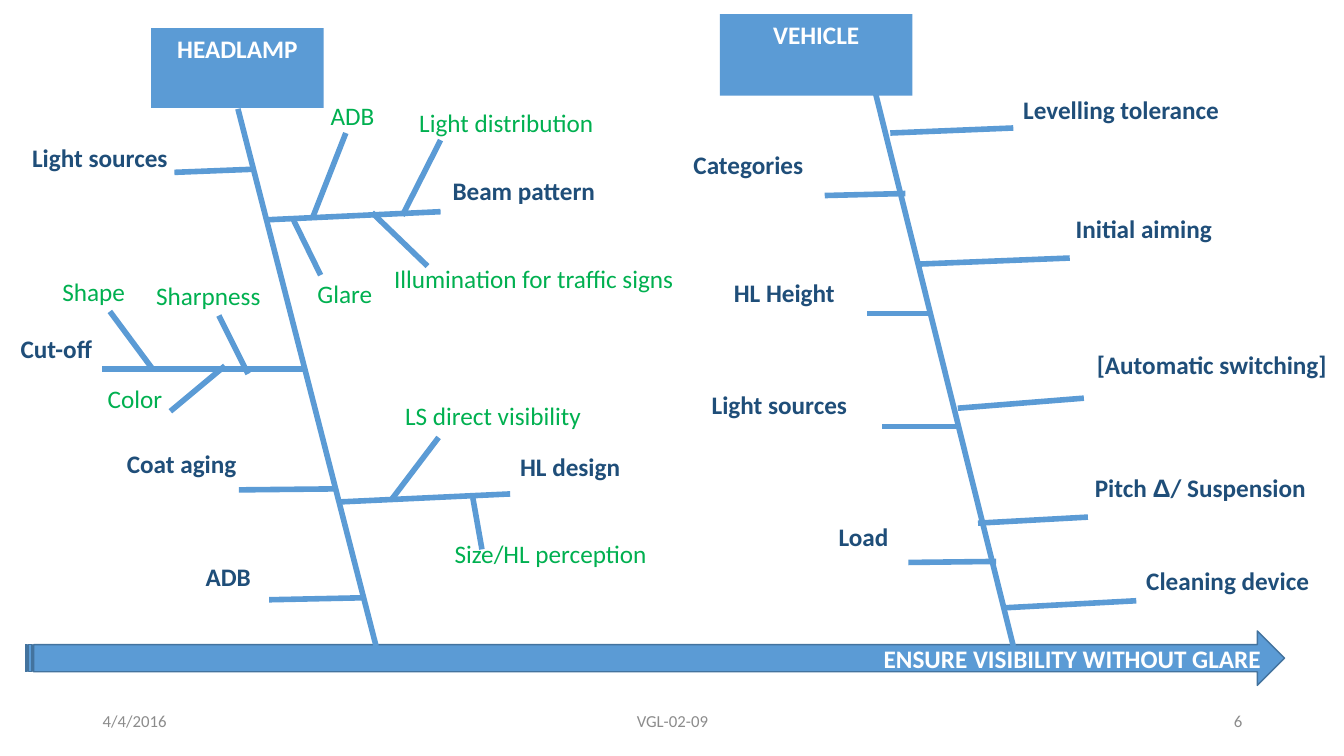
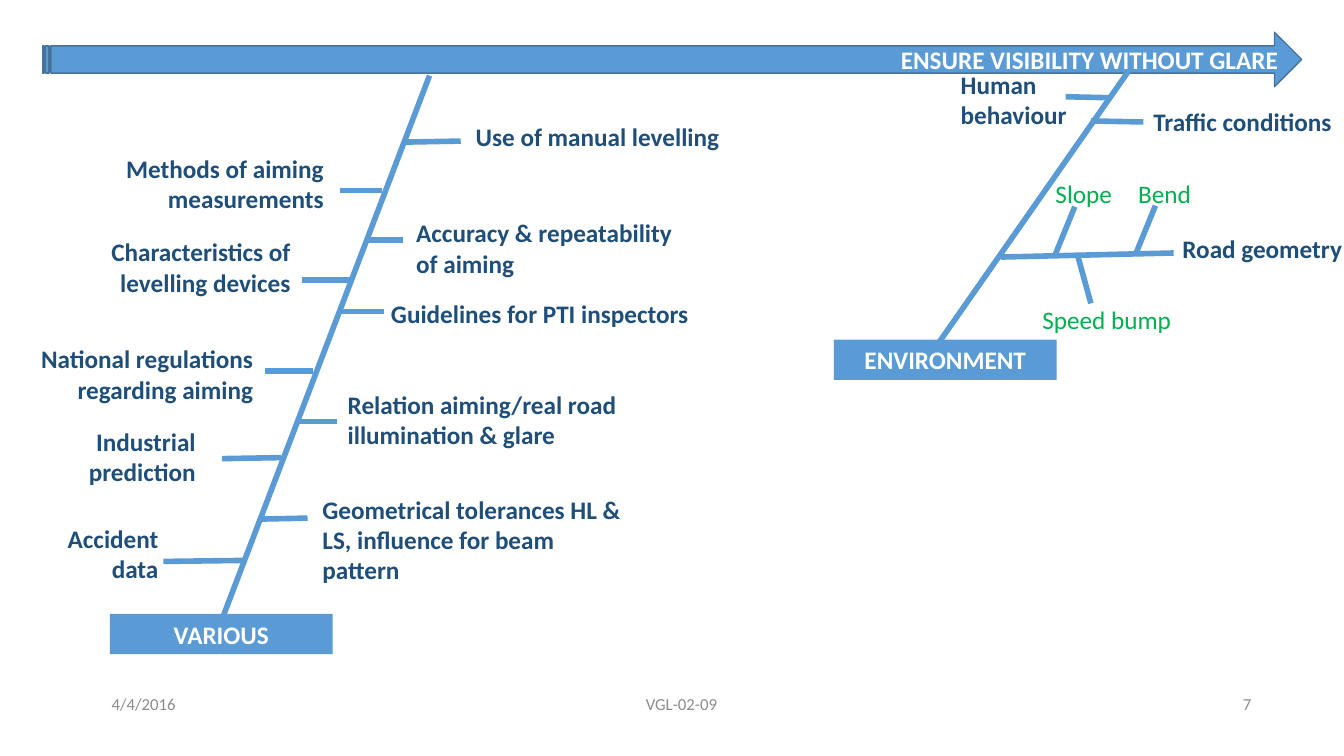
from itertools import groupby

from lxml import etree
from pptx import Presentation
from pptx import util as u
from pptx.dml import color
from pptx.enum import shapes, text
from pptx.oxml import ns

COLORS = {
    "bone": "5B9BD5",
    "edge": "43739E",
    "cause": "1F4E79",
    "detail": "00B050",
    "footer": "8C8C8C",
    "white": "FFFFFF",
}
ALIGN = text.PP_ALIGN
ANCHOR = text.MSO_ANCHOR


def inches(value):
    return u.Cm(value * 2.54)


def rgb(name):
    return color.RGBColor.from_string(COLORS[name])


class Fishbone:
    font = "Calibri"
    symbol_font = "Arial"
    size = 18
    bone_width = 4
    inset = 0.1

    def __init__(self):
        self.deck = Presentation()
        self.deck.slide_width = inches(13.33)
        self.deck.slide_height = inches(7.5)
        self.page = None

    def new_page(self):
        self.page = self.deck.slides.add_slide(self.deck.slide_layouts[6])

    def add_words(self, box, words, ink, align, bold=True, size=None, anchor=ANCHOR.TOP):
        frame = box.text_frame
        frame.word_wrap = True
        frame.vertical_anchor = anchor
        for index, line in enumerate(words.split("\n")):
            para = frame.add_paragraph() if index else frame.paragraphs[0]
            para.alignment = align
            for is_symbol, letters in groupby(line, key=lambda letter: letter == "Δ"):
                span = para.add_run()
                span.text = "".join(letters)
                span.font.name = self.symbol_font if is_symbol else self.font
                span.font.size = u.Pt(size or self.size)
                span.font.bold = bold
                span.font.color.rgb = rgb(ink)
        return frame

    def text_box(self, left, top, width, height):
        return self.page.shapes.add_textbox(*map(inches, (left, top, width, height)))

    def filled(self, kind, left, top, width, height):
        box = self.page.shapes.add_shape(kind, *map(inches, (left, top, width, height)))
        box.shadow.inherit = False
        box.fill.solid()
        box.fill.fore_color.rgb = rgb("bone")
        box.line.fill.background()
        return box

    def arrow(self, left, top):
        box = self.filled(shapes.MSO_SHAPE.STRIPED_RIGHT_ARROW, left, top, 12.49, 0.54)
        box.line.color.rgb = rgb("edge")
        box.line.width = u.Pt(1)
        self.add_words(box, "ENSURE VISIBILITY WITHOUT GLARE", "white", ALIGN.RIGHT,
                       anchor=ANCHOR.MIDDLE)

    def head(self, words, left, top, width, height):
        box = self.filled(shapes.MSO_SHAPE.RECTANGLE, left, top, width, height)
        self.add_words(box, words, "white", ALIGN.CENTER)

    def bone(self, x1, y1, x2, y2):
        line = self.page.shapes.add_connector(
            shapes.MSO_CONNECTOR.STRAIGHT, *map(inches, (x1, y1, x2, y2)))
        line.line.color.rgb = rgb("bone")
        line.line.width = u.Pt(self.bone_width)
        etree.SubElement(line._element.spPr, ns.qn("a:effectLst"))

    def label(self, words, left, top, width, ink, align):
        box = self.text_box(left, top, width, 0.4)
        frame = self.add_words(box, words, ink, align, bold=ink == "cause")
        on_right = align == ALIGN.RIGHT
        frame.margin_left = inches(0 if on_right else self.inset)
        frame.margin_right = inches(self.inset if on_right else 0)

    def branches(self, ink, rows, align=ALIGN.LEFT):
        for words, place, ends in rows:
            self.bone(*ends)
            self.label(words, *place, ink, align)

    def footer(self, left, top, number):
        cells = (
            ("4/4/2016", 0, 3, ALIGN.LEFT),
            ("VGL-02-09", 3.5, 4.5, ALIGN.CENTER),
            (number, 8.5, 3, ALIGN.RIGHT),
        )
        for words, offset, width, align in cells:
            box = self.text_box(left + offset, top, width, 0.4)
            self.add_words(box, words, "footer", align, bold=False, size=12,
                           anchor=ANCHOR.MIDDLE)


HEADLAMP_CAUSES = (
    ("Light sources", (0.22, 1.36, 1.67), (2.49, 1.68, 1.73, 1.71)),
    ("Beam pattern", (4.39, 1.69, 2), (4.37, 2.1, 2.66, 2.18)),
    ("Coat aging", (1.16, 4.4, 1.68), (3.32, 4.85, 2.37, 4.86)),
    ("HL design", (5.06, 4.43, 2.16), (5.06, 4.9, 3.36, 4.98)),
    ("ADB", (1.94, 5.52, 1.07), (3.62, 5.93, 2.67, 5.95)),
)
CUT_OFF = (("Cut-off", (0, 3.26, 1.01), (3.02, 3.66, 1.01, 3.66)),)
HEADLAMP_DETAILS = (
    ("ADB", (3.18, 0.95, 0.8), (3.43, 1.32, 3.1, 2.16)),
    ("Light distribution", (4.06, 1.02, 2.83), (4.37, 1.39, 3.99, 2.14)),
    ("Glare", (3.05, 2.71, 1.65), (2.91, 2.18, 3.18, 2.73)),
    ("Illumination for traffic signs", (3.81, 2.56, 3), (3.69, 2.11, 4.24, 2.64)),
    ("Shape", (0.52, 2.69, 1.16), (1.09, 3.09, 1.52, 3.67)),
    ("Sharpness", (1.45, 2.73, 1.44), (2.17, 3.13, 2.46, 3.71)),
    ("Color", (0.97, 3.75, 1.13), (2.23, 3.63, 1.69, 4.08)),
    ("LS direct visibility", (3.92, 3.92, 2.01), (4.35, 4.34, 3.88, 4.96)),
    ("Size/HL perception", (4.41, 5.29, 2.47), (4.78, 5.45, 4.69, 4.94)),
)
VEHICLE_CAUSES = (
    ("Levelling tolerance", (10.05, 0.89, 2.53), (10.05, 1.27, 8.83, 1.32)),
    ("Categories", (6.78, 1.43, 1.44), (8.98, 1.92, 8.18, 1.94)),
    ("Initial aiming", (10.57, 2.07, 2.23), (10.61, 2.56, 9.12, 2.62)),
    ("HL Height", (7.18, 2.7, 1.84), (9.21, 3.11, 8.6, 3.11)),
    ("[Automatic switching]", (10.78, 3.42, 2.55), (10.75, 3.95, 9.5, 4.05)),
    ("Light sources", (6.96, 3.81, 1.87), (9.5, 4.23, 8.75, 4.23)),
    ("Pitch Δ/ Suspension", (10.76, 4.64, 2.55), (10.79, 5.13, 9.7, 5.19)),
    ("Load", (8.22, 5.12, 1.23), (9.88, 5.57, 9.01, 5.58)),
    ("Cleaning device", (11.27, 5.56, 2.05), (11.27, 5.96, 9.96, 6.03)),
)
VARIOUS_LEFT = (
    ("Methods of aiming measurements", (0.15, 1.47, 3.16), (3.79, 1.89, 3.37, 1.89)),
    ("Characteristics of levelling devices", (0.59, 2.3, 2.39), (3.5, 2.78, 3, 2.78)),
    ("National regulations regarding aiming", (0.08, 3.36, 2.53), (3.1, 3.68, 2.63, 3.68)),
    ("Industrial prediction", (0, 4.18, 2.04), (2.79, 4.54, 2.2, 4.55)),
    ("Accident data", (0.27, 5.14, 1.4), (2.42, 5.56, 1.62, 5.57)),
)
VARIOUS_RIGHT = (
    ("Use of manual levelling", (4.62, 1.15, 3.43), (4.57, 1.4, 4.01, 1.41)),
    ("Accuracy & repeatability of aiming", (4.03, 2.11, 2.76), (4, 2.38, 3.64, 2.38)),
    ("Guidelines for PTI inspectors", (3.78, 2.91, 3.67), (3.81, 3.09, 3.37, 3.09)),
    ("Relation aiming/real road illumination & glare", (3.35, 3.81, 3.39),
     (3.34, 4.18, 2.96, 4.18)),
    ("Geometrical tolerances HL & LS, influence for beam pattern", (3.1, 4.85, 3.14),
     (3.05, 5.14, 2.57, 5.15)),
)
ENVIRONMENT_CAUSES = (
    ("Human\nbehaviour", (9.43, 0.64, 1.33), (10.57, 0.96, 11.02, 0.97)),
    ("Traffic conditions", (11.34, 1.01, 1.99), (11.34, 1.21, 10.82, 1.2)),
    ("Road geometry", (11.63, 2.27, 1.7), (11.64, 2.51, 9.93, 2.55)),
)
ENVIRONMENT_DETAILS = (
    ("Slope", (10.37, 1.72, 0.8), (10.66, 2.05, 10.46, 2.54)),
    ("Bend", (11.19, 1.72, 0.8), (11.46, 2.04, 11.26, 2.53)),
    ("Speed bump", (10.24, 2.97, 1.65), (10.69, 2.54, 10.82, 3.01)),
)


def main():
    chart = Fishbone()

    chart.new_page()
    chart.footer(0.92, 6.95, "6")
    chart.arrow(0.25, 6.26)
    chart.head("VEHICLE", 7.14, 0.14, 1.91, 0.81)
    chart.bone(8.66, 0.83, 10.05, 6.41)
    chart.branches("cause", VEHICLE_CAUSES)
    chart.head("HEADLAMP", 1.5, 0.28, 1.71, 0.79)
    chart.bone(2.36, 1.08, 3.73, 6.41)
    chart.branches("cause", HEADLAMP_CAUSES)
    chart.branches("cause", CUT_OFF, ALIGN.RIGHT)
    chart.branches("detail", HEADLAMP_DETAILS)

    chart.new_page()
    chart.footer(1.01, 6.78, "7")
    chart.arrow(0.42, 0.32)
    chart.head("VARIOUS", 1.09, 6.09, 2.21, 0.4)
    chart.bone(4.26, 0.75, 2.2, 6.15)
    chart.branches("cause", VARIOUS_LEFT, ALIGN.RIGHT)
    chart.branches("cause", VARIOUS_RIGHT)
    chart.head("ENVIRONMENT", 8.27, 3.37, 2.21, 0.4)
    chart.bone(11.19, 0.71, 9.29, 3.43)
    chart.branches("cause", ENVIRONMENT_CAUSES)
    chart.branches("detail", ENVIRONMENT_DETAILS)

    chart.deck.save("out.pptx")


if __name__ == "__main__":
    main()
